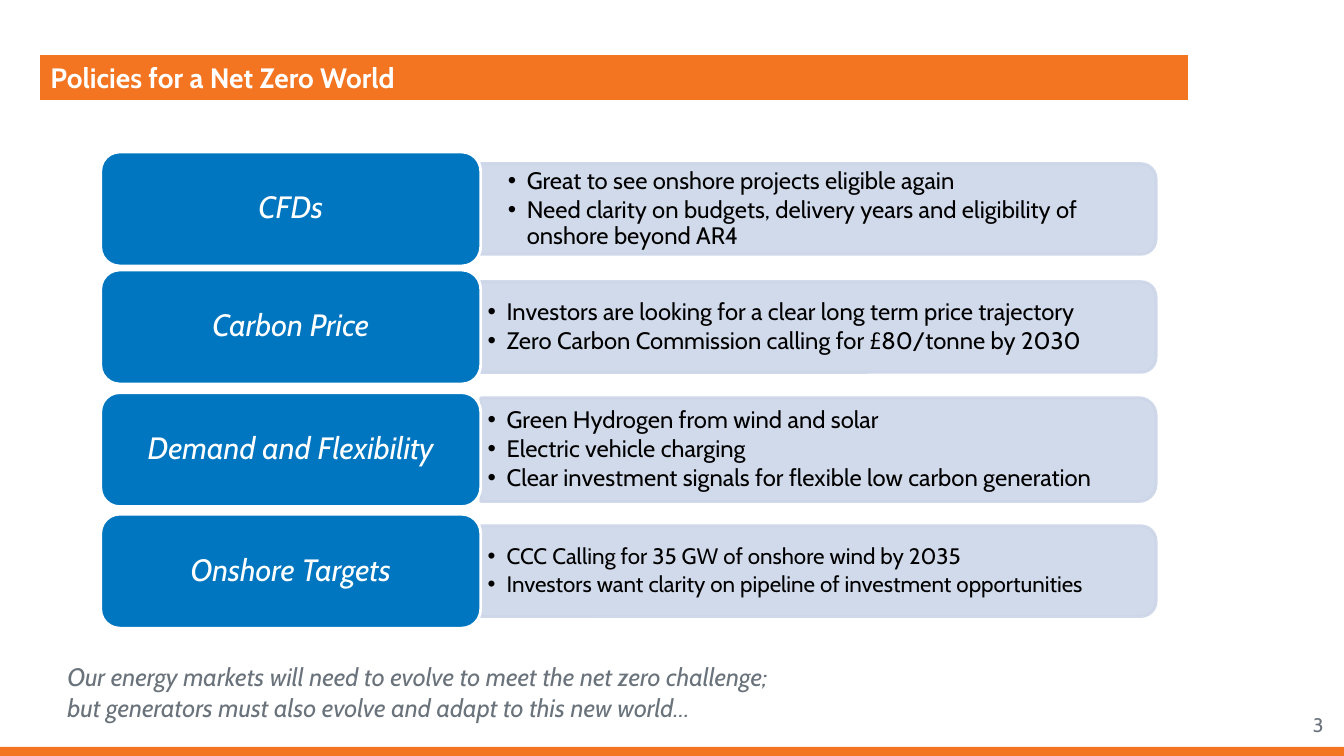
import dataclasses

import lxml.etree
import pptx
import pptx.dml.color
import pptx.enum.shapes
import pptx.enum.text
import pptx.oxml.ns
import pptx.util

Pt = pptx.util.Pt
Shape = pptx.enum.shapes.MSO_SHAPE
Align = pptx.enum.text.PP_ALIGN
Anchor = pptx.enum.text.MSO_ANCHOR
qn = pptx.oxml.ns.qn


@dataclasses.dataclass(frozen=True)
class Theme:
    font: str = "Cabin"
    orange: str = "F37421"
    blue: str = "0076C0"
    pale: str = "CCD6E8"
    white: str = "FFFFFF"
    black: str = "000000"
    grey: str = "6A737B"
    heading_size: int = 20
    label_size: int = 22
    point_size: int = 17
    small_point_size: int = 16
    closing_size: int = 18
    number_size: int = 14


THEME = Theme()
LABEL_LEFT, LABEL_WIDTH, LABEL_HEIGHT = 72, 271.4, 81.4
PANEL_LEFT, PANEL_WIDTH = 343.4, 482.4

POLICIES = [
    ("CFDs", 149.3, 64.8, 19.4, THEME.point_size, [
        "Great to see onshore projects eligible again",
        "Need clarity on budgets, delivery years and eligibility of onshore beyond AR4",
    ]),
    ("Carbon Price", 233.6, 64.8, 5, THEME.point_size, [
        "Investors are looking for a clear long term price trajectory",
        "Zero Carbon Commission calling for £80/tonne by 2030",
    ]),
    ("Demand and Flexibility", 321.2, 74.2, 5, THEME.point_size, [
        "Green Hydrogen from wind and solar",
        "Electric vehicle charging",
        "Clear investment signals for flexible low carbon generation",
    ]),
    ("Onshore Targets", 408, 64.8, 5, THEME.small_point_size, [
        "CCC Calling for 35 GW of onshore wind by 2035",
        "Investors want clarity on pipeline of investment opportunities",
    ]),
]


def rgb(color):
    return pptx.dml.color.RGBColor.from_string(color)


def place(part, left, top, width, height):
    part.left, part.top, part.width, part.height = map(Pt, (left, top, width, height))


def paint(part, fill, line=None, weight=0.75):
    part.fill.solid()
    part.fill.fore_color.rgb = rgb(fill)
    if line:
        part.line.color.rgb = rgb(line)
        part.line.width = Pt(weight)
    else:
        part.line.fill.background()


def add_block(slide, kind, box, fill, line=None, weight=0.75):
    block = slide.shapes.add_shape(kind, *map(Pt, box))
    block.shadow.inherit = False
    paint(block, fill, line, weight)
    return block


def make_translucent(block, percent):
    for color in block._element.spPr.iter(qn("a:srgbClr")):
        lxml.etree.SubElement(color, qn("a:alpha")).set("val", str(percent * 1000))


def set_frame(part, anchor, side=7.2, edge=3.6):
    frame = part.text_frame
    frame.word_wrap = True
    frame.auto_size = pptx.enum.text.MSO_AUTO_SIZE.NONE
    frame.vertical_anchor = anchor
    frame.margin_left = frame.margin_right = Pt(side)
    frame.margin_top = frame.margin_bottom = Pt(edge)
    return frame


def write(frame, lines, size, color, align=Align.LEFT, bold=False, italic=False):
    for index, line in enumerate(lines):
        paragraph = frame.add_paragraph() if index else frame.paragraphs[0]
        paragraph.alignment = align
        paragraph.space_before = Pt(0)
        run = paragraph.add_run()
        run.text = line
        run.font.name = THEME.font
        run.font.size = Pt(size)
        run.font.color.rgb = rgb(color)
        run.font.bold = bold
        run.font.italic = italic


def add_bullets(frame, gap):
    for paragraph in frame.paragraphs:
        paragraph.line_spacing = 0.9
        paragraph.space_after = Pt(gap)
        properties = paragraph._p.get_or_add_pPr()
        properties.set("marL", str(Pt(13.5)))
        properties.set("indent", str(Pt(-13.5)))
        lxml.etree.SubElement(properties, qn("a:buFont")).set("typeface", "Arial")
        lxml.etree.SubElement(properties, qn("a:buChar")).set("char", "•")


def add_heading(slide, text):
    heading = slide.shapes.title
    place(heading, 28.8, 39.6, 819.4, 31.7)
    paint(heading, THEME.orange, THEME.orange)
    frame = set_frame(heading, Anchor.MIDDLE)
    write(frame, [text], THEME.heading_size, THEME.white, bold=True)


def add_policy(slide, points_body, policy):
    name, middle, panel_height, inset, size, points = policy
    panel_box = (PANEL_LEFT + (PANEL_WIDTH - panel_height) / 2,
                 middle - PANEL_WIDTH / 2, panel_height, PANEL_WIDTH)
    panel = add_block(slide, Shape.ROUND_2_SAME_RECTANGLE, panel_box,
                      THEME.pale, THEME.pale, 2)
    panel.rotation = 90
    make_translucent(panel, 90)

    slide.shapes._spTree.append(points_body._element)
    points_height = panel_height - 7
    place(points_body, PANEL_LEFT, middle - points_height / 2, 478.8, points_height)
    frame = set_frame(points_body, Anchor.MIDDLE, inset, 2.6)
    write(frame, points, size, THEME.black)
    add_bullets(frame, round(size * 0.15, 1))

    label_box = (LABEL_LEFT, middle - LABEL_HEIGHT / 2, LABEL_WIDTH, LABEL_HEIGHT)
    label = add_block(slide, Shape.ROUNDED_RECTANGLE, label_box,
                      THEME.blue, THEME.white, 2)
    frame = set_frame(label, Anchor.MIDDLE)
    write(frame, [name], THEME.label_size, THEME.white, Align.CENTER, italic=True)
    frame.paragraphs[0].line_spacing = 0.9


def add_note(slide, box, lines, size, align=Align.LEFT, italic=False):
    note = slide.shapes.add_textbox(*map(Pt, box))
    write(set_frame(note, Anchor.TOP), lines, size, THEME.grey, align, italic=italic)


def main():
    deck = pptx.Presentation()
    deck.slide_width, deck.slide_height = Pt(960), Pt(540)
    slide = deck.slides.add_slide(deck.slide_layouts.get_by_name("Comparison"))
    add_block(slide, Shape.RECTANGLE, (0, 533.5, 960, 6.5), THEME.orange)
    add_heading(slide, "Policies for a Net Zero World")
    bodies = [body for body in slide.placeholders if body.placeholder_format.idx]
    for body, policy in zip(bodies, POLICIES):
        add_policy(slide, body, policy)
    add_note(slide, (41, 469.2, 780.5, 56), [
        "Our energy markets will need to evolve to meet the net zero challenge;",
        "but generators must also evolve and adapt to this new world…",
    ], THEME.closing_size, italic=True)
    add_note(slide, (912.2, 505.4, 40.3, 28.1), ["3"], THEME.number_size, Align.RIGHT)
    deck.save("out.pptx")


if __name__ == "__main__":
    main()
